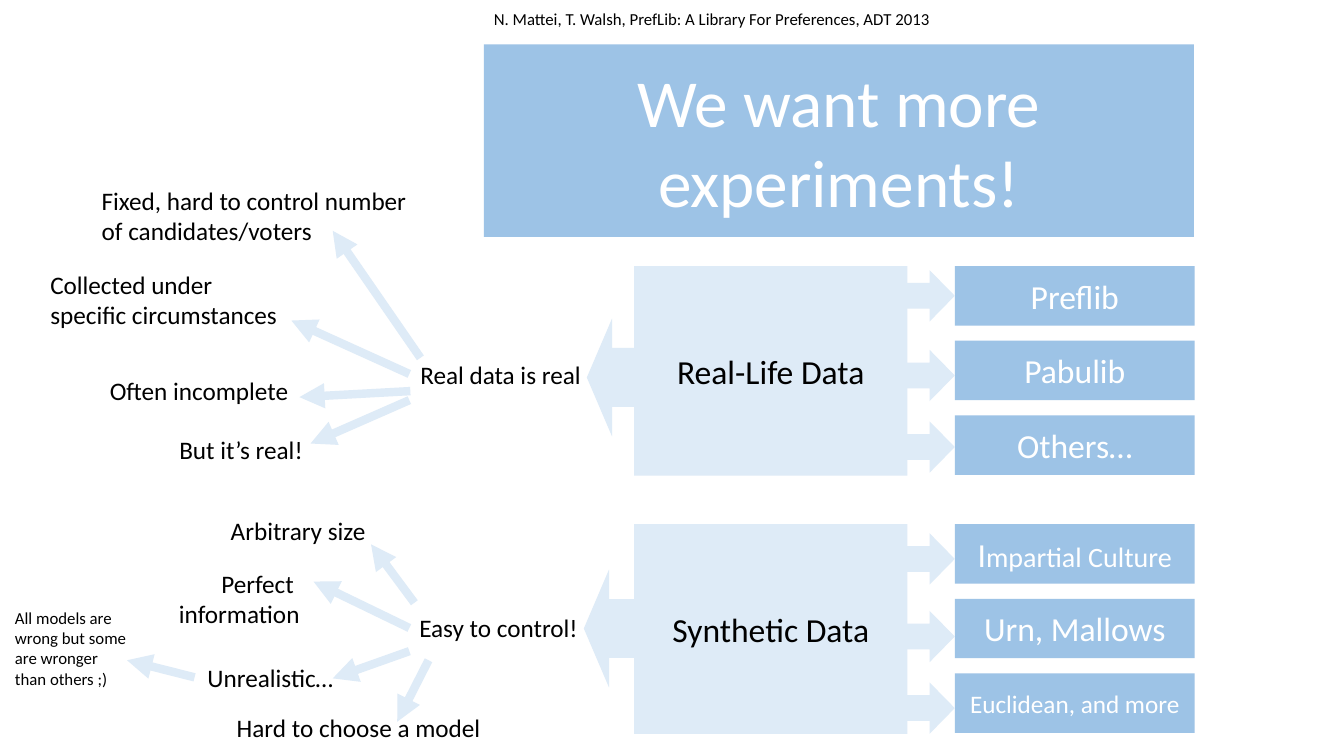
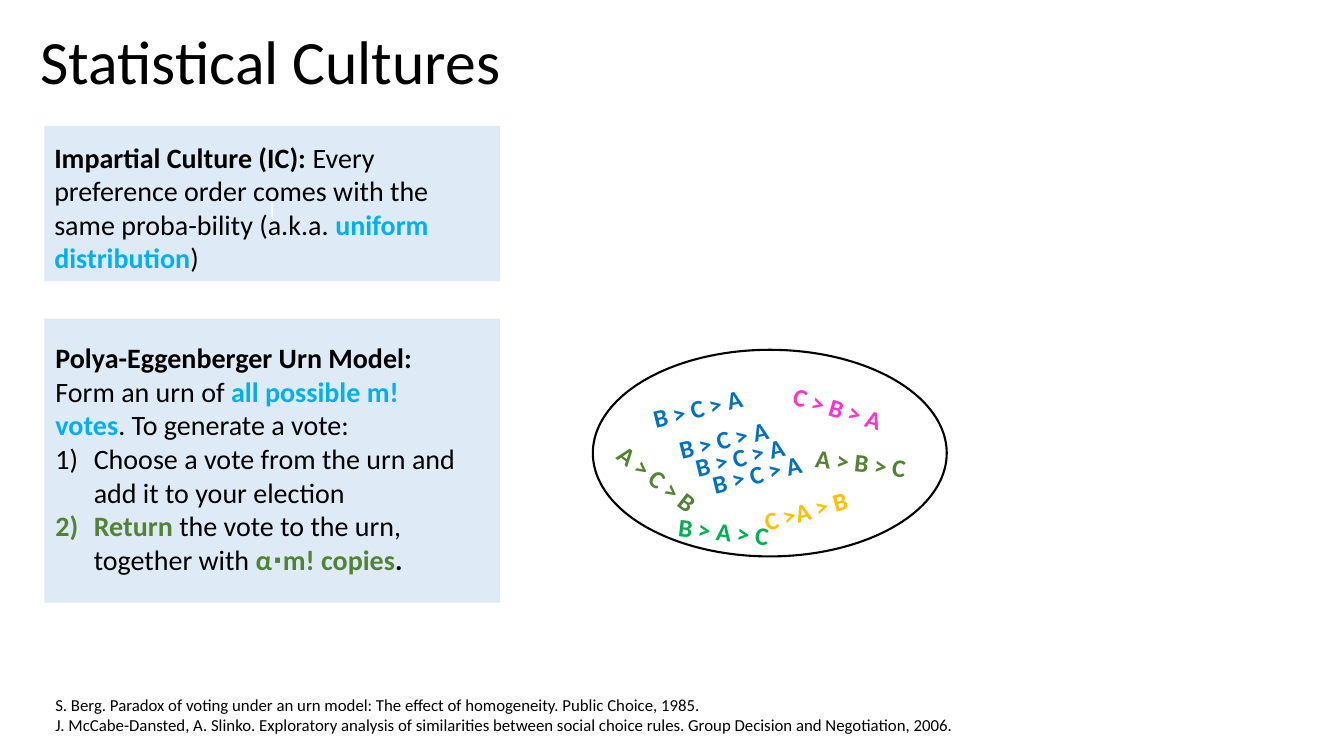
from lxml import etree
from pptx import Presentation
from pptx import util as u
from pptx.dml.color import RGBColor
from pptx.enum import shapes, text
from pptx.oxml.ns import qn


class Theme:
    font = "Calibri"
    black, white = "000000", "FFFFFF"
    band, panel = "9DC3E6", "DEEBF7"
    accent, strong = "00B0F0", "548235"
    green, blue, pink, gold = "00B050", "0070C0", "FF33CC", "FFC000"
    banner, title, head, lead, body, note = 48, 44, 24, 20, 18, 12


PP, MSO = text.PP_ALIGN, text.MSO_ANCHOR
SHAPE = shapes.MSO_SHAPE


def write(sp, *paras, size=Theme.body, color=Theme.black, bold=False, align=PP.LEFT,
          anchor=MSO.TOP, wrap=True, spacing=1.0, numbered=()):
    """Each paragraph is a string or a list of (text, run overrides)."""
    tf = sp.text_frame
    tf.word_wrap, tf.auto_size, tf.vertical_anchor = wrap, text.MSO_AUTO_SIZE.NONE, anchor
    for i, para in enumerate(paras):
        p = tf.paragraphs[0] if i == 0 else tf.add_paragraph()
        pPr = p._p.get_or_add_pPr()
        if numbered:
            indent = u.Inches(0.38) if i in numbered else 0
            pPr.set("marL", str(indent))
            pPr.set("indent", str(-indent))
            if indent:
                etree.SubElement(pPr, qn("a:buFont"), typeface="+mj-lt")
                etree.SubElement(pPr, qn("a:buAutoNum"), type="arabicParenR")
            else:
                etree.SubElement(pPr, qn("a:buNone"))
        p.alignment, p.line_spacing = align, spacing
        p.space_before = p.space_after = u.Pt(0)
        for words, own in [(para, {})] if isinstance(para, str) else para:
            r = p.add_run()
            r.text = words
            r.font.name = Theme.font
            r.font.size = u.Pt(own.get("size", size))
            r.font.bold = own.get("bold", bold)
            r.font.color.rgb = RGBColor.from_string(own.get("color", color))


def place(s, box, kind=None, fill=None):
    """Add a text box, or a preset shape when kind is given."""
    box = [u.Inches(v) for v in box]
    if kind is None:
        return s.shapes.add_textbox(*box)
    sp = s.shapes.add_shape(kind, *box)
    sp.shadow.inherit = False
    sp.line.fill.background()
    if fill:
        sp.fill.solid()
        sp.fill.fore_color.rgb = RGBColor.from_string(fill)
    else:
        sp.fill.background()
    return sp


prs = Presentation()
prs.slide_width, prs.slide_height = u.Inches(13.33), u.Inches(7.5)
centered = dict(align=PP.CENTER, anchor=MSO.MIDDLE)

# Slide 1: banner title
s = prs.slides.add_slide(prs.slide_layouts[5])
sp = s.shapes.title
sp.left, sp.top, sp.width, sp.height = [u.Inches(v) for v in (4.8, 0.44, 7.04, 1.91)]
sp.fill.solid()
sp.fill.fore_color.rgb = RGBColor.from_string(Theme.band)
write(sp, "We want more experiments!", size=Theme.banner, color=Theme.white, **centered)

# Data kinds with their sources
culture = [("I", {}), ("mpartial Culture", {"size": Theme.lead})]
euclidean = [("Euclidean, and more", {"size": Theme.body})]
groups = [
    ("Real-Life Data", 2.64, (5.82, 3.16), ["Preflib", "Pabulib", "Others…"], [2.68, 3.47, 4.18]),
    ("Synthetic Data", 5.2, (5.79, 5.65), [culture, "Urn, Mallows", euclidean], [5.29, 6.06, 6.77]),
]
for name, top, back, sources, arrow_tops in groups:
    sp = place(s, (6.29, top, 2.71, 2.08), SHAPE.RECTANGLE, Theme.panel)
    write(sp, name, size=Theme.head, **centered)
    place(s, (*back, 0.5, 1.17), SHAPE.RIGHT_ARROW, Theme.panel).rotation = 180
    for i, (source, arrow_top) in enumerate(zip(sources, arrow_tops)):
        sp = place(s, (9.47, top + 0.74 * i, 2.38, 0.59), SHAPE.RECTANGLE, Theme.band)
        write(sp, source, size=Theme.head, color=Theme.white, **centered)
        place(s, (8.97, arrow_top, 0.5, 0.51), SHAPE.RIGHT_ARROW, Theme.panel)

# Arrows from each kind to its properties
for x1, y1, x2, y2 in [
    (4.17, 3.55, 3.3, 2.29), (4.06, 3.71, 2.89, 3.18),
    (4.07, 3.88, 2.97, 3.94), (4.06, 3.97, 3.08, 4.4),
    (4.11, 5.98, 3.68, 5.4), (4.06, 6.23, 3.11, 5.77),
    (4.06, 6.46, 3.3, 6.73), (4.25, 6.55, 3.94, 7.16),
    (1.93, 6.72, 1.26, 6.55),
]:
    ends = [u.Inches(v) for v in (x1, y1, x2, y2)]
    line = s.shapes.add_connector(shapes.MSO_CONNECTOR.STRAIGHT, *ends)
    line.line.color.rgb = RGBColor.from_string(Theme.panel)
    line.line.width = u.Pt(6)
    etree.SubElement(line.line._get_or_add_ln(), qn("a:tailEnd"), type="triangle")
    etree.SubElement(line._element.spPr, qn("a:effectLst"))

# Properties
for words, box in [
    ("Real data is real", (4.07, 3.52, 2.49, 0.4)),
    ("Fixed, hard to control number of candidates/voters", (0.91, 1.79, 3.26, 0.71)),
    ("Collected under specific circumstances", (0.4, 2.62, 2.49, 0.71)),
    ("Often incomplete", (0.99, 3.67, 2.49, 0.4)),
    ("But it’s real!", (1.68, 4.26, 2.49, 0.4)),
    ("Easy to control!", (4.06, 6.03, 2.49, 0.4)),
    ("Arbitrary size", (2.19, 5.06, 1.63, 0.4)),
    ("Unrealistic…", (1.96, 6.52, 2.64, 0.4)),
    ("Hard to choose a model", (2.25, 7.02, 2.64, 0.4)),
]:
    write(place(s, box), words)
write(place(s, (0.86, 5.59, 2.21, 0.71)), "Perfect ", "information", align=PP.RIGHT)

# Remark and reference
write(place(s, (0.05, 5.98, 1.32, 0.91)),
      "All models are wrong but some are wronger than others ;)", size=Theme.note)
write(place(s, (4.8, 0.04, 8.34, 0.3)),
      "N. Mattei, T. Walsh, PrefLib: A Library For Preferences, ADT 2013", size=Theme.note)

# Slide 2: title
s = prs.slides.add_slide(prs.slide_layouts[1])
sp = s.shapes.title
sp.left, sp.top, sp.width, sp.height = [u.Inches(v) for v in (0.3, 0.18, 9.91, 0.92)]
write(sp, "Statistical Cultures", size=Theme.title, anchor=MSO.MIDDLE, spacing=0.9)

# Urn model panel
strong = dict(bold=True, color=Theme.strong)
accent = dict(bold=True, color=Theme.accent)
sp = s.placeholders[1]
sp.left, sp.top, sp.width, sp.height = [u.Inches(v) for v in (0.44, 3.16, 4.52, 2.82)]
sp.fill.solid()
sp.fill.fore_color.rgb = RGBColor.from_string(Theme.panel)
tf = sp.text_frame
tf.margin_left, tf.margin_top, tf.margin_right = u.Inches(0.11), u.Inches(0.22), u.Inches(0.32)
write(sp,
      [("Polya-Eggenberger Urn Model:", {"bold": True}), (" Form an urn of ", {}),
       ("all possible m! votes", accent), (". To generate a vote:", {})],
      "Choose a vote from the urn and add it to your election",
      [("Return ", strong), ("the vote to the urn, together with ", {}),
       ("α∙m! copies", strong), (".", {"bold": True})],
      size=Theme.lead, numbered=(1, 2))

# Impartial culture panel
sp = place(s, (0.44, 1.25, 4.52, 1.54), SHAPE.RECTANGLE, Theme.panel)
write(sp, "|", color=Theme.white, **centered)
write(place(s, (0.44, 1.34, 4.4, 1.45)),
      [("Impartial Culture (IC): ", {"bold": True}),
       ("Every preference order comes with the same proba-bility (a.k.a. ", {}),
       ("uniform distribution", accent), (")", {})],
      size=Theme.lead)

# Urn with votes
urn = place(s, (5.88, 3.47, 3.51, 2.05), SHAPE.OVAL)
urn.line.color.rgb = RGBColor.from_string(Theme.black)
urn.line.width = u.Pt(1.5)
for vote, left, top, angle, color in [
    ("A > B > C", 7.99, 4.39, 6.4, Theme.strong),
    ("B > A > C", 6.63, 5.07, 6.4, Theme.green),
    ("A > C > B", 5.97, 4.55, 37.6, Theme.strong),
    ("B > C > A", 6.37, 3.85, 346.4, Theme.blue),
    ("C > B > A", 7.76, 3.85, 16.6, Theme.pink),
    ("C >A > B", 7.47, 4.86, 344.6, Theme.gold),
    ("B > C > A", 6.63, 4.16, 346.4, Theme.blue),
    ("B > C > A", 6.79, 4.33, 346.4, Theme.blue),
    ("B > C > A", 6.96, 4.5, 346.4, Theme.blue),
]:
    sp = place(s, (left, top, 1.1, 0.4))
    sp.rotation = angle
    write(sp, vote, color=color, bold=True, wrap=False)

# References
write(place(s, (0.45, 6.84, 11.34, 0.5)),
      "S. Berg. Paradox of voting under an urn model: The effect of homogeneity. "
      "Public Choice, 1985.",
      "J. McCabe-Dansted, A. Slinko. Exploratory analysis of similarities between "
      "social choice rules. Group Decision and Negotiation, 2006.",
      size=Theme.note)

prs.save("out.pptx")
